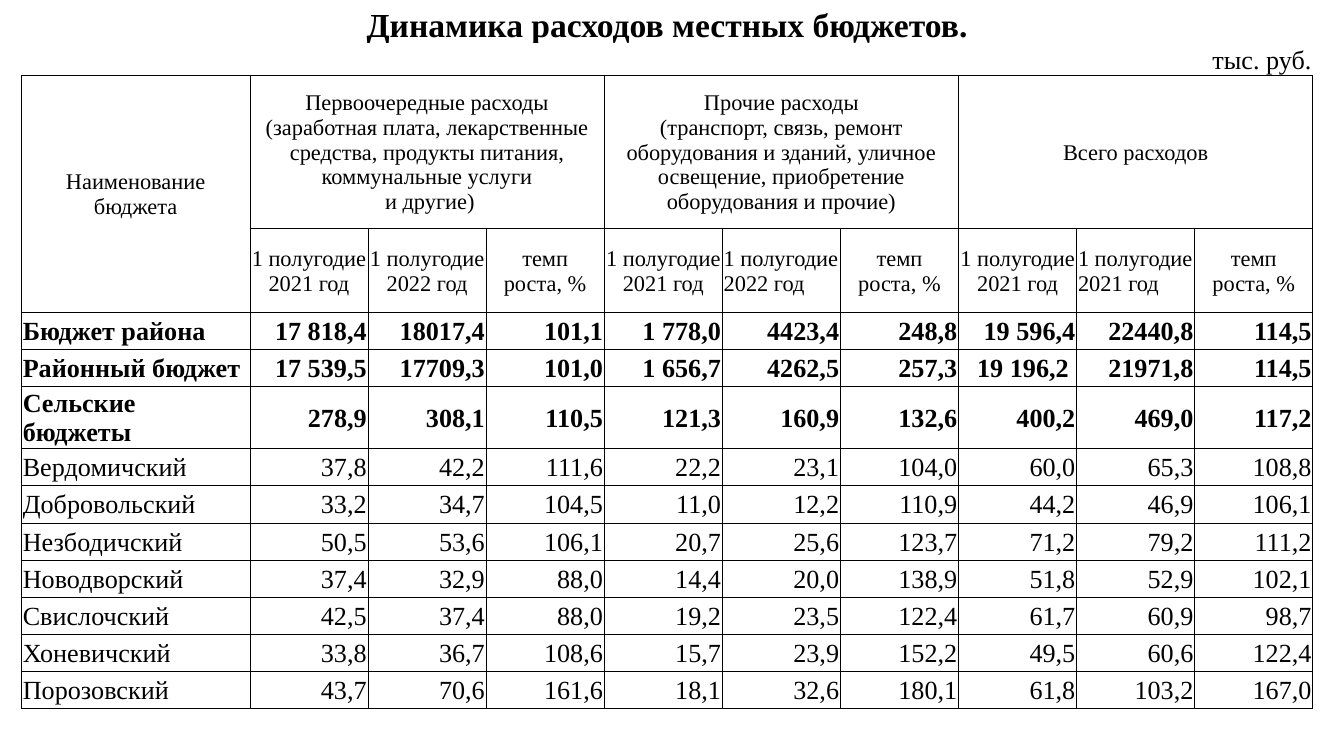
"""Build a slide with a table of local budget spending."""
import pptx
import pptx.dml.color
import pptx.enum.text
import pptx.oxml
import pptx.oxml.ns
import pptx.util
from lxml import etree

Pt = pptx.util.Pt
ALIGN = pptx.enum.text.PP_ALIGN
ANCHOR = pptx.enum.text.MSO_ANCHOR
qn = pptx.oxml.ns.qn
COLORS = {"text": "000000", "border": "000000"}
FONT = "Times New Roman"
COL_WIDTHS = [122.4] + [63.27] * 9
ROW_HEIGHTS = [21.6, 16.7, 82, 45, 19.9, 19.9, 33.2] + [19.9] * 7
MERGES = [(0, 0, 0, 9), (1, 1, 1, 2), (1, 3, 1, 4), (1, 5, 1, 6),
          (2, 0, 3, 0), (2, 1, 2, 3), (2, 4, 2, 6), (2, 7, 2, 9)]
HEADINGS = {
    (2, 0): "Наименование бюджета",
    (2, 1): "Первоочередные расходы (заработная плата, лекарственные средства, "
            "продукты питания, коммунальные услуги\n и другие)",
    (2, 4): "Прочие расходы\n(транспорт, связь, ремонт оборудования и зданий, "
            "уличное освещение, приобретение оборудования и прочие)",
    (2, 7): "Всего расходов",
}
PERIODS = ["1 полугодие 2021 год", "1 полугодие 2022 год", "темп\nроста, %"]
BUDGETS = """Бюджет района|17 818,4|18017,4|101,1|1 778,0|4423,4|248,8|19 596,4|22440,8|114,5
Районный бюджет|17 539,5|17709,3|101,0|1 656,7|4262,5|257,3|19 196,2 |21971,8|114,5
Сельские бюджеты|278,9|308,1|110,5|121,3|160,9|132,6|400,2|469,0|117,2
Вердомичский|37,8|42,2|111,6|22,2|23,1|104,0|60,0|65,3|108,8
Добровольский|33,2|34,7|104,5|11,0|12,2|110,9|44,2|46,9|106,1
Незбодичский|50,5|53,6|106,1|20,7|25,6|123,7|71,2|79,2|111,2
Новодворский|37,4|32,9|88,0|14,4|20,0|138,9|51,8|52,9|102,1
Свислочский|42,5|37,4|88,0|19,2|23,5|122,4|61,7|60,9|98,7
Хоневичский|33,8|36,7|108,6|15,7|23,9|152,2|49,5|60,6|122,4
Порозовский|43,7|70,6|161,6|18,1|32,6|180,1|61,8|103,2|167,0"""


def set_borders(cell, sides):
    tcPr = cell._tc.get_or_add_tcPr()
    for side in sides:
        ln = etree.SubElement(tcPr, qn(f"a:ln{side}"), w=str(Pt(0.5)))
        fill = etree.SubElement(ln, qn("a:solidFill"))
        etree.SubElement(fill, qn("a:srgbClr"), val=COLORS["border"])


def write(cell, text, size, align, bold=False):
    cell.text = text
    for p in cell.text_frame.paragraphs:
        p.alignment = align
        p.font.name = FONT
        p.font.size = Pt(size)
        p.font.bold = bold
        p.font.color.rgb = pptx.dml.color.RGBColor.from_string(COLORS["text"])


prs = pptx.Presentation()
prs.slide_width, prs.slide_height = Pt(720), Pt(405)
s = prs.slides.add_slide(prs.slide_layouts[6])
frame = s.shapes.add_table(len(ROW_HEIGHTS), len(COL_WIDTHS), Pt(11.5), Pt(2.1),
                           Pt(sum(COL_WIDTHS)), Pt(sum(ROW_HEIGHTS)))
table = frame.table
table.first_row = table.horz_banding = False
for column, width in zip(table.columns, COL_WIDTHS):
    column.width = Pt(width)
for row, height in zip(table.rows, ROW_HEIGHTS):
    row.height = Pt(height)

for i, row in enumerate(table.rows):
    for cell in row.cells:
        cell.margin_left = cell.margin_right = cell.margin_top = Pt(0.72)
        cell.margin_bottom = 0
        cell.vertical_anchor = ANCHOR.BOTTOM if i < 2 else ANCHOR.MIDDLE
        set_borders(cell, "" if i == 0 else "B" if i == 1 else "LRTB")
        cell.fill.background()
        if i < 2:
            p = cell.text_frame.paragraphs[0]
            etree.SubElement(p._p, qn("a:endParaRPr"), sz="1200")
for top, left, bottom, right in MERGES:
    table.cell(top, left).merge(table.cell(bottom, right))

write(table.cell(0, 0), "Динамика расходов местных бюджетов.", 18, ALIGN.CENTER, True)
write(table.cell(1, 9), "тыс. руб.", 14, ALIGN.RIGHT)
for (i, j), text in HEADINGS.items():
    write(table.cell(i, j), text, 12, ALIGN.CENTER)
for j in range(1, 10):
    text = PERIODS[0] if j == 8 else PERIODS[(j - 1) % 3]
    write(table.cell(3, j), text, 12, ALIGN.LEFT if j in (5, 8) else ALIGN.CENTER)
for i, line in enumerate(BUDGETS.split("\n")):
    for j, text in enumerate(line.split("|")):
        write(table.cell(i + 4, j), text, 14, ALIGN.RIGHT if j else ALIGN.LEFT, i < 3)

prs.save("out.pptx")
